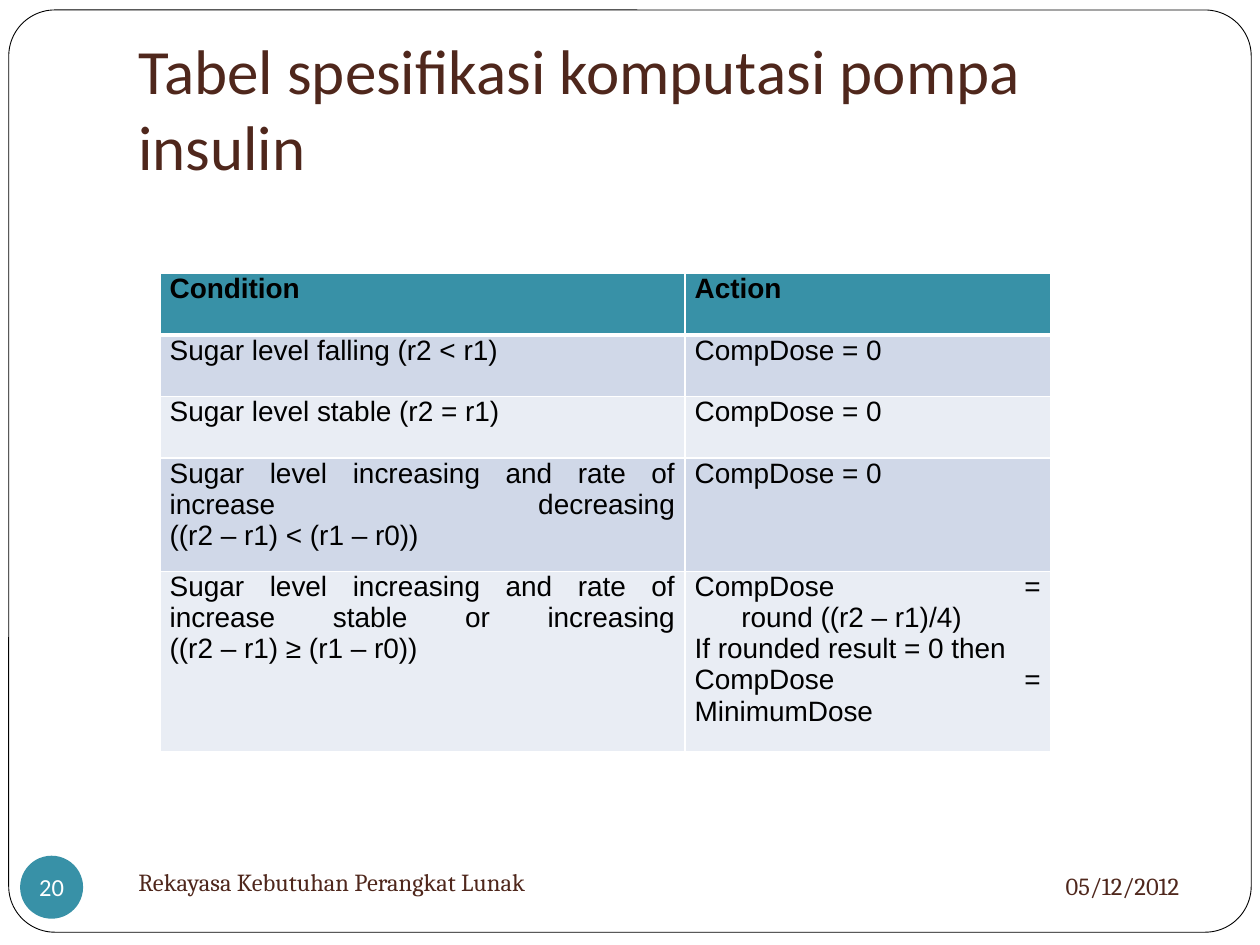
"""Build the slide with the insulin pump computation table."""
import copy

import lxml.etree
import pptx
import pptx.dml.color
import pptx.enum.shapes
import pptx.enum.text
import pptx.oxml.ns
import pptx.util

Pt = pptx.util.Pt
qn = pptx.oxml.ns.qn
Align = pptx.enum.text.PP_ALIGN
Anchor = pptx.enum.text.MSO_ANCHOR
Shape = pptx.enum.shapes.MSO_SHAPE


def tint(code):
    """Turn a hex string into a colour."""
    return pptx.dml.color.RGBColor.from_string(code)


def write(frame, text, font="Calibri", size=14, color="4F271C", bold=False,
          align=Align.LEFT, anchor=Anchor.MIDDLE, inset=(7.2, 3.6, 7.2, 3.6), wrap=True):
    """Fill a text frame: a newline starts a paragraph, a vertical tab breaks a line."""
    frame.word_wrap = wrap
    frame.vertical_anchor = anchor
    frame.margin_left, frame.margin_top, frame.margin_right, frame.margin_bottom = map(Pt, inset)
    for i, line in enumerate(text.split("\n")):
        para = frame.add_paragraph() if i else frame.paragraphs[0]
        para.text = line
        para.alignment = align
        for run in para.runs:
            run.font.name = font
            run.font.size = Pt(size)
            run.font.bold = bold
            run.font.color.rgb = tint(color)
        for br in para._p.findall(qn("a:br")):
            br.append(copy.deepcopy(para.runs[0]._r.rPr))


deck = pptx.Presentation()
deck.slide_width, deck.slide_height = Pt(720), Pt(540)
slide = deck.slides.add_slide(deck.slide_layouts[6])
shapes = slide.shapes

frame = shapes.add_shape(Shape.ROUNDED_RECTANGLE, Pt(5), Pt(5.7), Pt(710), Pt(527))
frame.adjustments[0] = 0.05
frame.shadow.inherit = False
frame.fill.solid()
frame.fill.fore_color.rgb = tint("FFFFFF")
frame.line.color.rgb = tint("000000")
frame.line.width = Pt(0.5)

title = shapes.add_textbox(Pt(72), Pt(21.6), Pt(612), Pt(90))
write(title.text_frame, "Tabel spesifikasi komputasi pompa insulin", size=36,
      anchor=Anchor.BOTTOM, inset=(7.2, 3.6, 7.2, 7.2))

rows = [
    ("Condition", "Action"),
    ("Sugar level falling (r2 < r1)", "CompDose = 0"),
    ("Sugar level stable (r2 = r1)", "CompDose = 0"),
    ("Sugar level increasing and rate of increase decreasing\v((r2 – r1) < (r1 – r0))",
     "CompDose = 0"),
    ("Sugar level increasing and rate of increase stable or increasing\v((r2 – r1) ≥ (r1 – r0))",
     "CompDose =\vround ((r2 – r1)/4)\nIf rounded result = 0 then\nCompDose = MinimumDose"),
]
fills = ["3891A7", "D0D8E8", "E9EDF4", "D0D8E8", "E9EDF4"]
highs = [35.2, 35.2, 35.2, 35.2, 48]

table = shapes.add_table(5, 2, Pt(91.4), Pt(156.2), Pt(509), Pt(sum(highs))).table
for col, wide in zip(table.columns, (300, 209)):
    col.width = Pt(wide)
for r, (row, fill, high) in enumerate(zip(rows, fills, highs)):
    table.rows[r].height = Pt(high)
    for c, text in enumerate(row):
        cell = table.cell(r, c)
        write(cell.text_frame, text, font="Arial", size=16, color="000000",
              bold=r == 0, align=Align.JUSTIFY)
        cell.vertical_anchor = Anchor.TOP
        cell.margin_left = cell.margin_right = Pt(5.6)
        cell.margin_top, cell.margin_bottom = Pt(0), Pt(7.2)
        props = cell._tc.get_or_add_tcPr()
        for side in "LRTB":
            thick = (r, side) in ((0, "B"), (1, "T"))
            edge = lxml.etree.SubElement(props, qn("a:ln" + side), w=str(Pt(3 if thick else 1)))
            solid = lxml.etree.SubElement(edge, qn("a:solidFill"))
            lxml.etree.SubElement(solid, qn("a:srgbClr"), val="FFFFFF")
        cell.fill.solid()
        cell.fill.fore_color.rgb = tint(fill)

dose = table.cell(4, 1).text_frame.paragraphs[0]._p.get_or_add_pPr()
dose.set("marL", str(Pt(26.7)))
dose.set("indent", str(-Pt(26.7)))

badge = shapes.add_shape(Shape.OVAL, Pt(11.5), Pt(489), Pt(36), Pt(36))
badge.shadow.inherit = False
badge.fill.solid()
badge.fill.fore_color.rgb = tint("3891A7")
badge.line.fill.background()
write(badge.text_frame, "20", color="FFFFFF", align=Align.CENTER,
      inset=(0, 0, 0, 0), wrap=False)

foot = shapes.add_textbox(Pt(72), Pt(486), Pt(312), Pt(36))
write(foot.text_frame, "Rekayasa Kebutuhan Perangkat Lunak", font="Cambria")
date = shapes.add_textbox(Pt(486), Pt(487.5), Pt(195), Pt(37.5))
write(date.text_frame, "05/12/2012", font="Cambria", align=Align.RIGHT)

deck.save("out.pptx")
